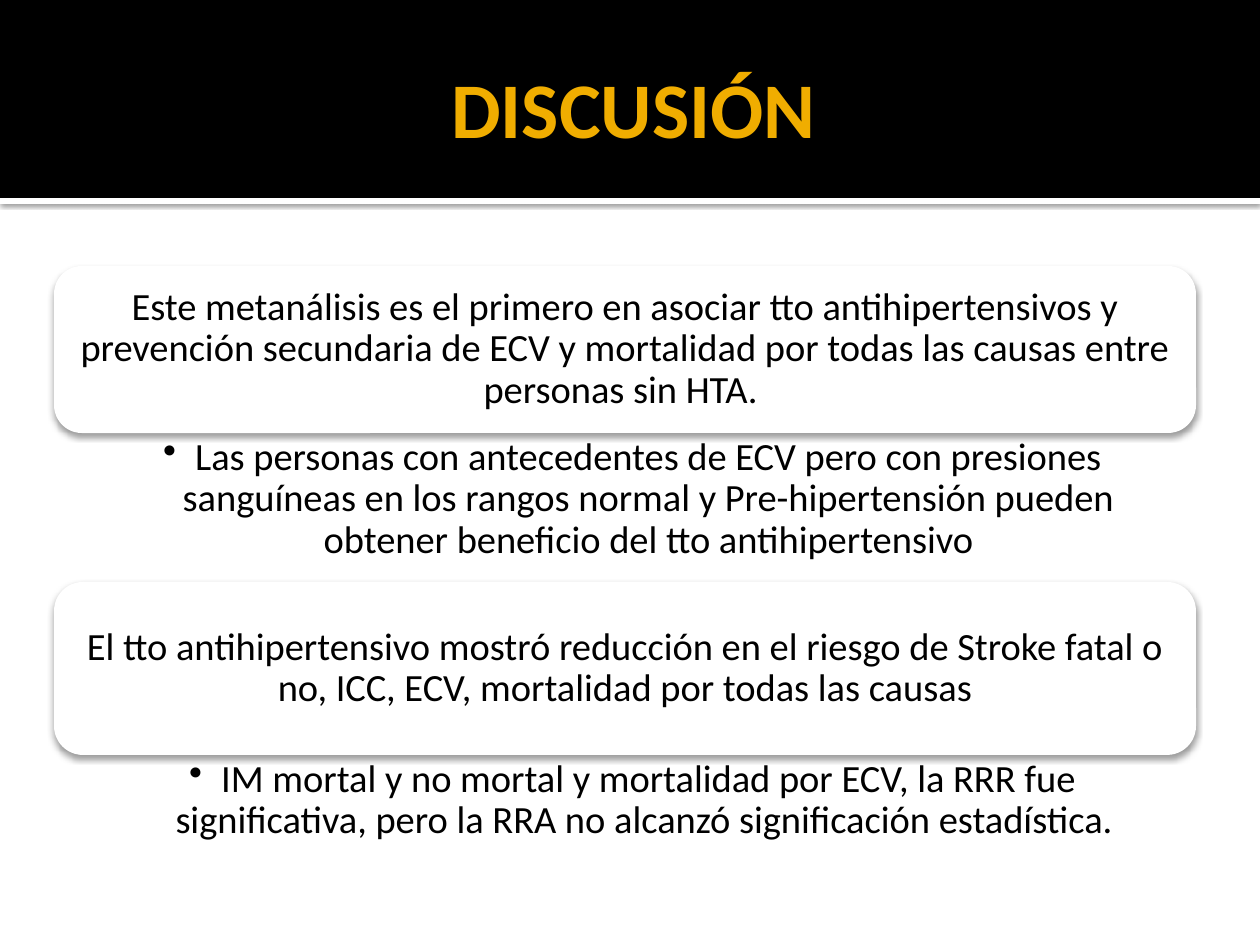
from lxml import etree
from pptx import Presentation
from pptx.dml.color import RGBColor
from pptx.enum.shapes import MSO_SHAPE
from pptx.enum.text import MSO_ANCHOR, PP_ALIGN
from pptx.oxml.ns import qn
from pptx.util import Pt

RECT = MSO_SHAPE.RECTANGLE
ROUND = MSO_SHAPE.ROUNDED_RECTANGLE
MIDDLE = MSO_ANCHOR.MIDDLE
TOP = MSO_ANCHOR.TOP
CENTER = PP_ALIGN.CENTER

BLACK = RGBColor(0x00, 0x00, 0x00)
WHITE = RGBColor(0xFF, 0xFF, 0xFF)
GOLD = RGBColor(0xF0, 0xAD, 0x00)

FONT = "Calibri"
WIDE, HIGH = 1260, 945
INDENT = 32
NOTE_H = 149

# Top, height, card text, bullet text
POINTS = [
    (266, 167,
     "Este metanálisis es el primero en asociar tto antihipertensivos y "
     "prevención secundaria de ECV y mortalidad por todas las causas entre "
     "personas sin HTA. ",
     "Las personas con antecedentes de ECV pero con presiones sanguíneas en "
     "los rangos normal y Pre-hipertensión pueden obtener beneficio del tto "
     "antihipertensivo"),
    (582, 173,
     "El tto antihipertensivo mostró reducción en el riesgo de Stroke fatal o "
     "no, ICC, ECV, mortalidad por todas las causas",
     "IM mortal y no mortal y mortalidad por ECV, la RRR fue significativa, "
     "pero la RRA no alcanzó significación estadística. "),
]


def px(n):
    return round(n * 914400 / 126)


def write(shape, text, size=22, color=BLACK, bold=False, anchor=MIDDLE,
          pad=(0, 0, 0, 0), space=0.9, bullet=False):
    frame = shape.text_frame
    frame.word_wrap = True
    frame.vertical_anchor = anchor
    (frame.margin_left, frame.margin_top,
     frame.margin_right, frame.margin_bottom) = map(px, pad)
    para = frame.paragraphs[0]
    para.alignment = CENTER
    para.line_spacing = space
    if bullet:
        props = para._p.get_or_add_pPr()
        props.set("marL", str(px(INDENT)))
        props.set("indent", str(-px(INDENT)))
        etree.SubElement(props, qn("a:buChar"), char="•")
    run = para.add_run()
    run.text = text
    font = run.font
    font.name, font.size, font.bold = FONT, Pt(size), bold
    font.color.rgb = color


def shade(shape, alpha, blur, dist):
    effects = shape._element.spPr.find(qn("a:effectLst"))
    outer = etree.SubElement(
        effects, qn("a:outerShdw"), blurRad=str(Pt(blur)),
        dist=str(Pt(dist)), dir="5400000", algn="t", rotWithShape="0")
    tint = etree.SubElement(outer, qn("a:srgbClr"), val=str(BLACK))
    etree.SubElement(tint, qn("a:alpha"), val=str(alpha * 1000))


def block(slide, kind, box, color):
    shape = slide.shapes.add_shape(kind, *map(px, box))
    shape.shadow.inherit = False
    shape.fill.solid()
    shape.fill.fore_color.rgb = color
    shape.line.fill.background()
    return shape


def label(slide, box, text, **style):
    write(slide.shapes.add_textbox(*map(px, box)), text, **style)


def header(slide, x, y, w, h):
    # White strip with its shadow, under the black band
    strip = block(slide, RECT, (x, y + h, w, 6), WHITE)
    shade(strip, 60, 2.5, 0.8)
    block(slide, RECT, (x, y, w, h), BLACK)
    label(slide, (x + 63, y + 21, w - 126, h - 25), "DISCUSIÓN",
          size=45, color=GOLD, bold=True, pad=(13, 6, 6, 6), space=1.0)


def point(slide, x, y, w, h, claim, note):
    # Card with the claim, and its bullet below
    card = block(slide, ROUND, (x, y, w, h), WHITE)
    shade(card, 38, 3.5, 2)
    write(card, claim, pad=(3, 3, 3, 3))
    label(slide, (x, y + h, w, NOTE_H), note, anchor=TOP,
          pad=(36, 4, 21, 4), bullet=True)


def main():
    deck = Presentation()
    deck.slide_width, deck.slide_height = px(WIDE), px(HIGH)
    slide = deck.slides.add_slide(deck.slide_layouts[6])
    header(slide, 0, 0, WIDE, 198)
    for top, high, claim, note in POINTS:
        point(slide, 54, top, 1142, high, claim, note)
    deck.save("out.pptx")


if __name__ == "__main__":
    main()
